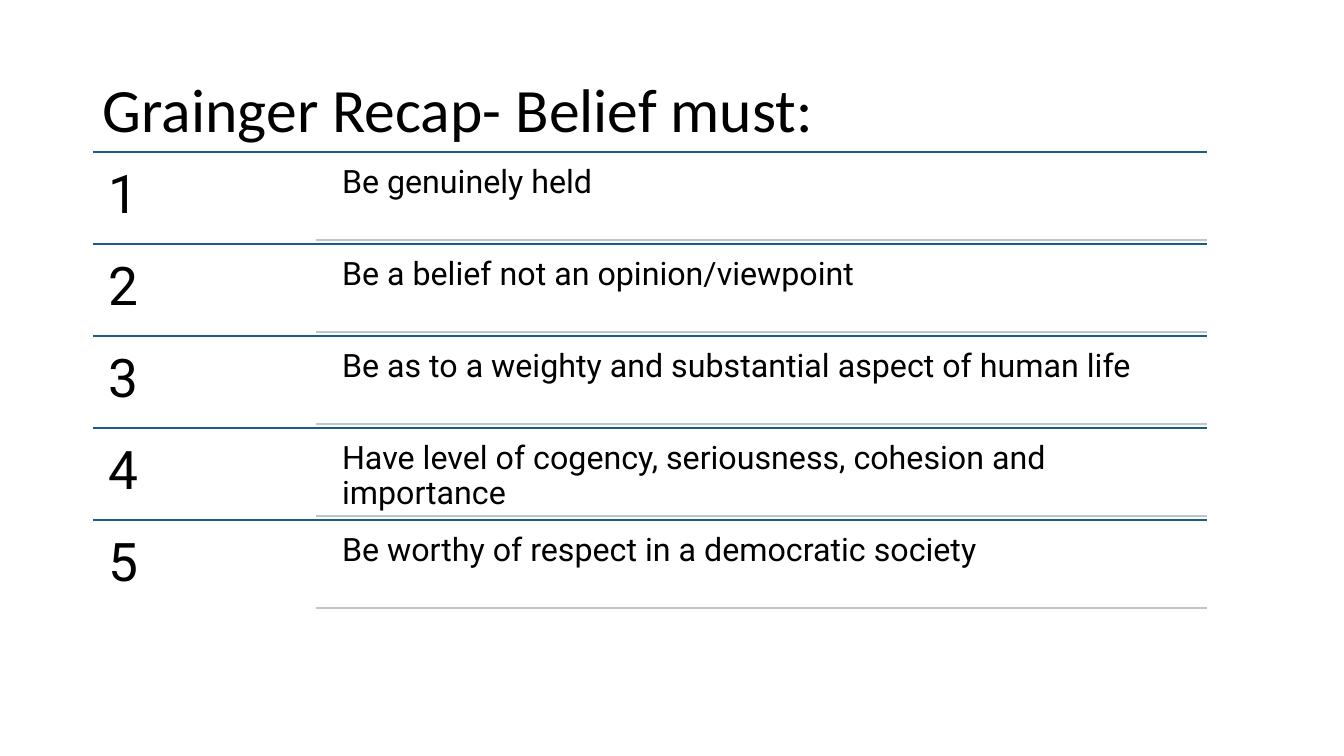
from dataclasses import dataclass

from pptx import Presentation
from pptx.dml.color import RGBColor
from pptx.enum import shapes, text
from pptx.oxml.xmlchemy import OxmlElement
from pptx.util import Emu, Pt

SCALE = 914400 / 100.8  # EMU per px


@dataclass(frozen=True)
class Theme:
    ink: str = "000000"
    rule: str = "156082"
    hair: str = "BDC5CD"
    head: str = "Calibri"
    body: str = "Roboto"
    title: int = 44
    digit: int = 38
    item: int = 23
    line: int = 1


THEME = Theme()
LEFT, RIGHT, TOP, PITCH = 93, 1207, 152, 92
BELIEFS = [
    "Be genuinely held",
    "Be a belief not an opinion/viewpoint",
    "Be as to a weighty and substantial aspect of human life",
    "Have level of cogency, seriousness, cohesion and importance",
    "Be worthy of respect in a democratic society",
]


def px(n):
    return Emu(round(n * SCALE))


def write(slide, words, box, *, size, font=THEME.body, pad=(10, 10),
          anchor=text.MSO_ANCHOR.TOP):
    frame = slide.shapes.add_textbox(*map(px, box)).text_frame
    frame.word_wrap = True
    frame.vertical_anchor = anchor
    frame.margin_left = frame.margin_right = px(pad[0])
    frame.margin_top = frame.margin_bottom = px(pad[1])
    para = frame.paragraphs[0]
    para.line_spacing = 0.9
    run = para.add_run()
    run.text = words
    run.font.name = font
    run.font.size = Pt(size)
    run.font.color.rgb = RGBColor.from_string(THEME.ink)


def rule(slide, left, y, color):
    line = slide.shapes.add_connector(
        shapes.MSO_CONNECTOR.STRAIGHT, px(left), px(y), px(RIGHT), px(y))
    line.line.color.rgb = RGBColor.from_string(color)
    line.line.width = Pt(THEME.line)
    line._element.spPr.append(OxmlElement("a:effectLst"))


def row(slide, num, words, top):
    rule(slide, LEFT, top, THEME.rule)
    write(slide, str(num), (LEFT, top, 223, PITCH),
          size=THEME.digit, pad=(16, 16))
    write(slide, words, (332, top + 4, 875, 84), size=THEME.item)
    rule(slide, 316, top + 88, THEME.hair)


def main():
    deck = Presentation()
    deck.slide_width, deck.slide_height = px(1344), px(756)
    slide = deck.slides.add_slide(deck.slide_layouts[6])

    # Heading
    write(slide, "Grainger Recap- Belief must:", (LEFT, 40, 1159, 146),
          size=THEME.title, font=THEME.head, pad=(10, 5),
          anchor=text.MSO_ANCHOR.MIDDLE)

    # Numbered list
    for i, words in enumerate(BELIEFS):
        row(slide, i + 1, words, TOP + i * PITCH)

    deck.save("out.pptx")


if __name__ == "__main__":
    main()
